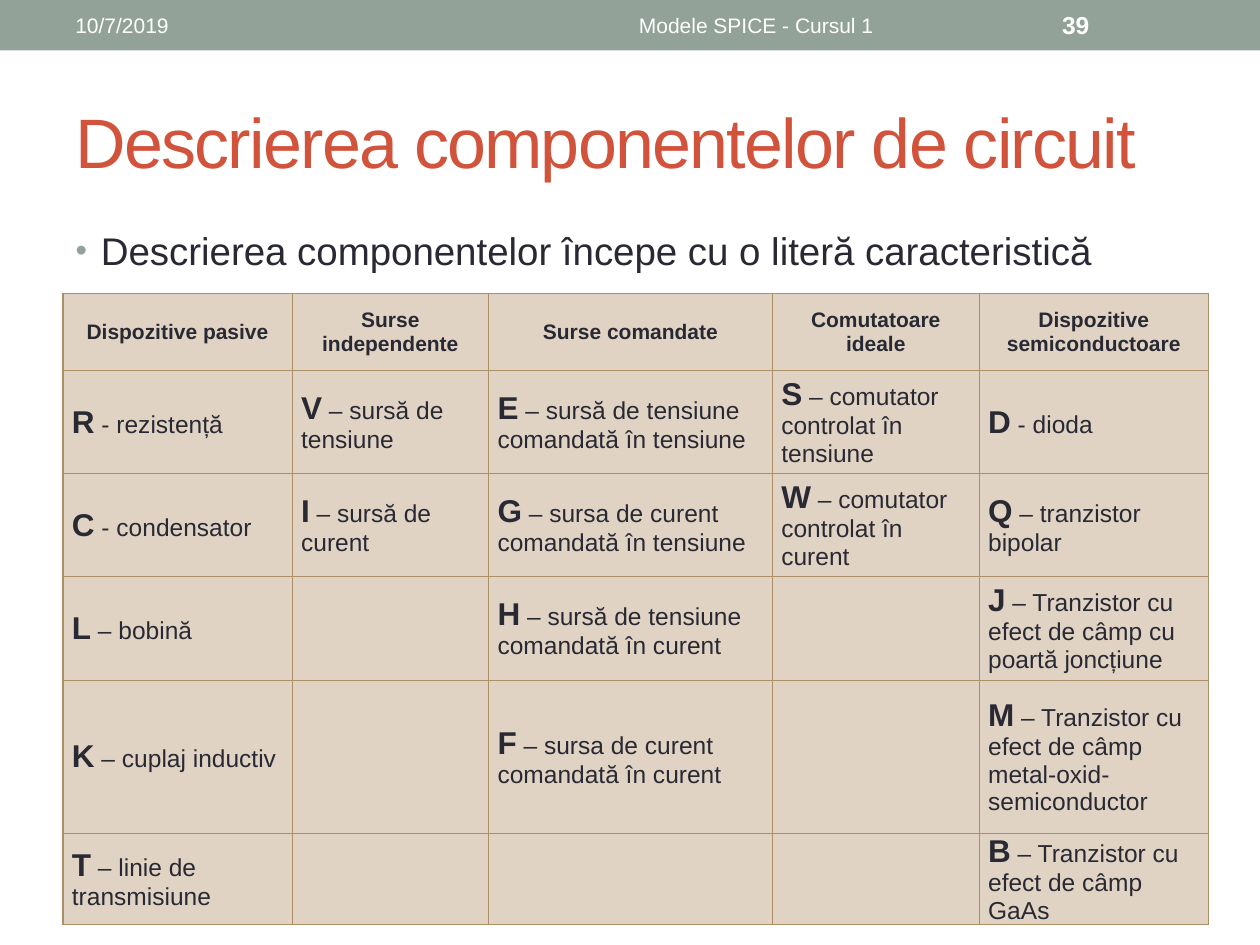
from lxml import etree
from pptx import Presentation
from pptx.dml.color import RGBColor
from pptx.enum.shapes import MSO_SHAPE
from pptx.enum.text import MSO_ANCHOR, MSO_AUTO_SIZE, PP_ALIGN
from pptx.oxml import parse_xml
from pptx.util import Cm, Pt

RECTANGLE = MSO_SHAPE.RECTANGLE
MIDDLE, TOP = MSO_ANCHOR.MIDDLE, MSO_ANCHOR.TOP
LEFT, CENTER = PP_ALIGN.LEFT, PP_ALIGN.CENTER
NO_AUTOFIT = MSO_AUTO_SIZE.NONE
DRAWING_NS = "http://schemas.openxmlformats.org/drawingml/2006/main"

SAGE, RUST, INK, WHITE, SAND, BRONZE = "93A299", "D2533C", "292934", "FFFFFF", "E0D3C4", "AD8F67"

TITLE = "Descrierea componentelor de circuit"
INTRO = "Descrierea componentelor începe cu o literă caracteristică"
BAND_TEXTS = [
    ("10/7/2019", 1.27, 8.05, LEFT, 12, False),
    ("Modele SPICE - Cursul 1", 9.53, 11.43, CENTER, 12, False),
    ("39", 21.16, 2.97, LEFT, 14, True),
]
HEADINGS = ["Dispozitive pasive", "Surse independente", "Surse comandate",
            "Comutatoare ideale", "Dispozitive semiconductoare"]
COMPONENTS = [
    [("R", " - rezistență"), ("V", " – sursă de tensiune"),
     ("E", " – sursă de tensiune comandată în tensiune"),
     ("S", " – comutator controlat în tensiune"), ("D", " - dioda")],
    [("C", " - condensator"), ("I", " – sursă de curent"),
     ("G", " – sursa de curent comandată în tensiune"),
     ("W", " – comutator controlat în curent"), ("Q", " – tranzistor bipolar")],
    [("L", " – bobină"), None, ("H", " – sursă de tensiune comandată în curent"),
     None, ("J", " – Tranzistor cu efect de câmp cu poartă joncțiune")],
    [("K", " – cuplaj inductiv"), None, ("F", " – sursa de curent comandată în curent"),
     None, ("M", " – Tranzistor cu efect de câmp metal-oxid-semiconductor")],
    [("T", " – linie de transmisiune"), None, None, None,
     ("B", " – Tranzistor cu efect de câmp GaAs")],
]
COLUMN_WIDTHS = [4.62, 3.96, 5.72, 4.17, 4.62]
ROW_HEIGHTS = [1.55, 2.08, 2.08, 2.08, 3.1, 1.8]
CELL_FORMAT = {"vertical_anchor": MIDDLE, "margin_left": Cm(0.18), "margin_right": Cm(0.18),
               "margin_top": 0, "margin_bottom": 0}


def apply(target, settings):
    for attribute, value in settings.items():
        setattr(target, attribute, value)


def paint(fill, color):
    fill.solid()
    fill.fore_color.rgb = RGBColor.from_string(color)


def write(paragraph, text, size, color, bold=False):
    run = paragraph.add_run()
    run.text = text
    apply(run.font, {"name": "Arial", "size": Pt(size), "bold": bold})
    run.font.color.rgb = RGBColor.from_string(color)
    return run


def place(shape, left, top, width, height, anchor, align):
    apply(shape, {"left": Cm(left), "top": Cm(top), "width": Cm(width), "height": Cm(height)})
    apply(shape.text_frame, {"word_wrap": True, "auto_size": NO_AUTOFIT, "vertical_anchor": anchor})
    paragraph = shape.text_frame.paragraphs[0]
    paragraph.alignment = align
    return paragraph


def add_bullet(paragraph):
    properties = paragraph._p.get_or_add_pPr()
    apply_indent = {"marL": Cm(0.51), "indent": -Cm(0.51)}
    for attribute, value in apply_indent.items():
        properties.set(attribute, str(value))
    color = etree.SubElement(properties, f"{{{DRAWING_NS}}}buClr")
    etree.SubElement(color, f"{{{DRAWING_NS}}}srgbClr", val=SAGE)
    etree.SubElement(properties, f"{{{DRAWING_NS}}}buSzPct", val="85000")
    etree.SubElement(properties, f"{{{DRAWING_NS}}}buFont", typeface="Arial")
    etree.SubElement(properties, f"{{{DRAWING_NS}}}buChar", char="•")


def add_borders(cell):
    properties = cell._tc.get_or_add_tcPr()
    for position, side in enumerate("LRTB"):
        properties.insert(position, parse_xml(
            f'<a:ln{side} xmlns:a="{DRAWING_NS}" w="{Pt(0.75)}"><a:solidFill>'
            f'<a:srgbClr val="{BRONZE}"/></a:solidFill></a:ln{side}>'))


def add_header_band(slide):
    band = slide.shapes.add_shape(RECTANGLE, 0, 0, Cm(25.4), Cm(1.02))
    band.shadow.inherit = False
    paint(band.fill, SAGE)
    band.line.fill.background()
    for text, left, width, align, size, bold in BAND_TEXTS:
        box = slide.shapes.add_textbox(0, 0, 0, 0)
        write(place(box, left, 0.05, width, 0.91, MIDDLE, align), text, size, WHITE, bold)


def add_component_table(slide):
    table = slide.shapes.add_table(
        len(ROW_HEIGHTS), len(COLUMN_WIDTHS), Cm(1.27), Cm(5.92),
        Cm(sum(COLUMN_WIDTHS)), Cm(sum(ROW_HEIGHTS))).table
    for column, width in zip(table.columns, COLUMN_WIDTHS):
        column.width = Cm(width)
    for row, height in zip(table.rows, ROW_HEIGHTS):
        row.height = Cm(height)
    for cell in table.iter_cells():
        apply(cell, CELL_FORMAT)
        paint(cell.fill, SAND)
        add_borders(cell)
    for column, heading in enumerate(HEADINGS):
        paragraph = table.cell(0, column).text_frame.paragraphs[0]
        paragraph.alignment = CENTER
        write(paragraph, heading, 12, INK, True)
    for row, entries in enumerate(COMPONENTS, 1):
        for column, entry in enumerate(entries):
            if entry:
                letter, meaning = entry
                paragraph = table.cell(row, column).text_frame.paragraphs[0]
                write(paragraph, letter, 18, INK, True)
                write(paragraph, meaning, 14, INK)


def main():
    """Build the slide on describing circuit components."""
    deck = Presentation()
    apply(deck, {"slide_width": Cm(25.4), "slide_height": Cm(19.05)})
    slide = deck.slides.add_slide(deck.slide_layouts[1])
    title, body = slide.placeholders
    heading = write(place(title, 1.27, 1.47, 22.86, 2.74, MIDDLE, LEFT), TITLE, 40, RUST)
    heading.font._element.set("spc", "-100")
    intro = place(body, 1.27, 4.45, 22.86, 13.54, TOP, LEFT)
    add_bullet(intro)
    write(intro, INTRO, 22, INK)
    add_header_band(slide)
    add_component_table(slide)
    deck.save("out.pptx")


if __name__ == "__main__":
    main()
